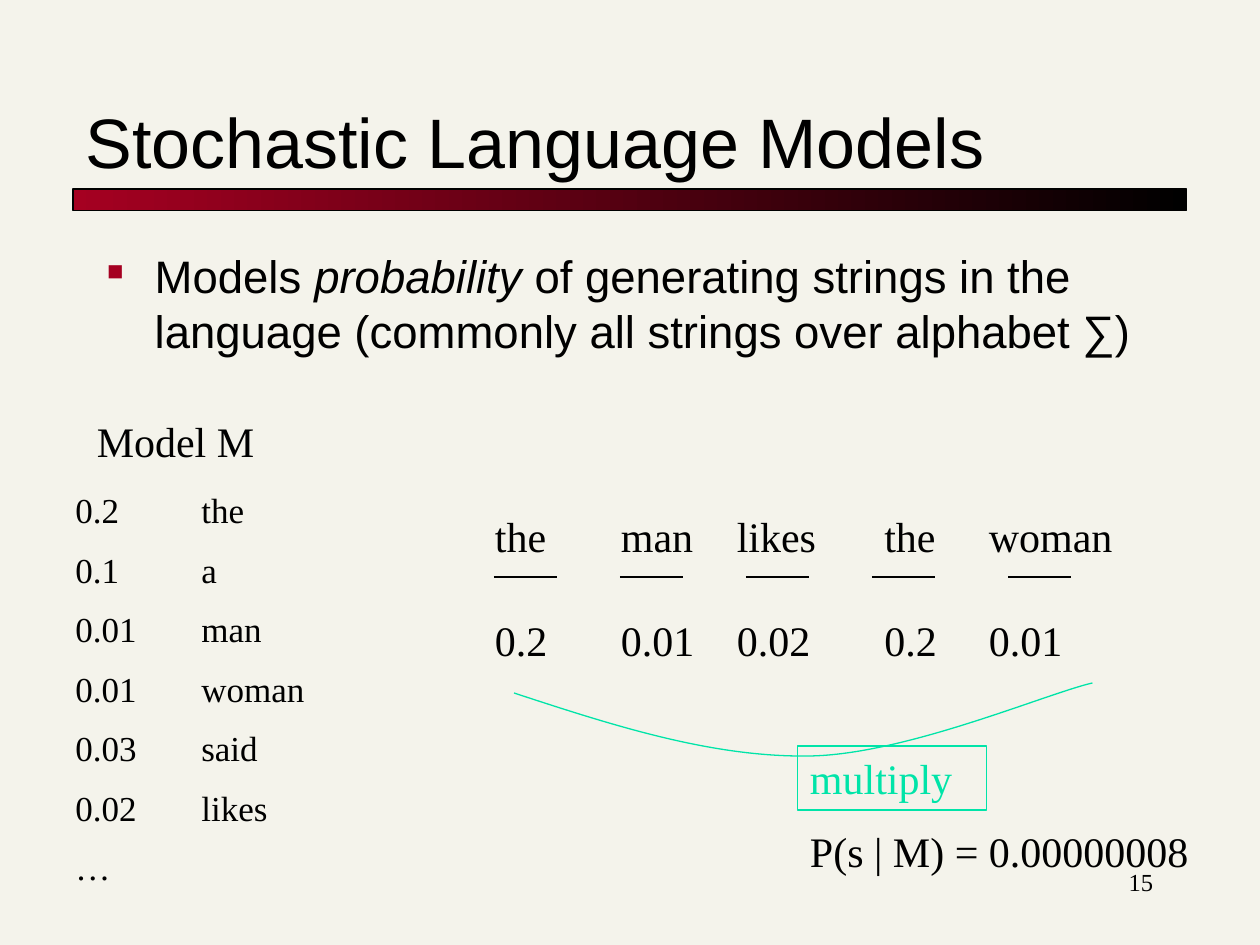
import pptx
import pptx.util
import pptx.dml.color
import pptx.enum.shapes
import pptx.enum.text
import pptx.oxml.ns
from lxml import etree

Inches, Pt = pptx.util.Inches, pptx.util.Pt
RGBColor = pptx.dml.color.RGBColor
MSO_SHAPE = pptx.enum.shapes.MSO_SHAPE
PP_ALIGN = pptx.enum.text.PP_ALIGN
qn = pptx.oxml.ns.qn

BLACK = RGBColor(0x00, 0x00, 0x00)
CREAM = RGBColor(0xF4, 0xF3, 0xEB)
CRIMSON = RGBColor(0xA5, 0x00, 0x21)
MINT = RGBColor(0x00, 0xE4, 0xA8)
SANS, SERIF = "Arial", "Times New Roman"

TITLE = "Stochastic Language Models"
STATEMENT = [
    ("Models ", False),
    ("probability", True),
    (" of generating strings in the language (commonly all strings over alphabet ∑)", False),
]
MODEL = [("0.2", "the"), ("0.1", "a"), ("0.01", "man"), ("0.01", "woman"),
         ("0.03", "said"), ("0.02", "likes"), ("…",)]
MODEL_TAB = 1
SENTENCE = [
    ("the", "0.2", 3.83, 0.67),
    ("man", "0.01", 4.83, 0.83),
    ("likes", "0.02", 5.75, 0.83),
    ("the", "0.2", 6.92, 0.83),
    ("woman", "0.01", 7.75, 1.5),
]
WORD_TOP, RULE_Y, CHANCE_TOP, ROW_HEIGHT = 4, 4.58, 4.83, 0.5
RULE_STARTS = [3.92 + i for i in range(4)] + [8]
RULE_LENGTH = 0.5
CURVE = [(4.08, 5.5), (4.87, 5.76), (5.65, 6.01), (6.42, 6),
         (7.18, 5.99), (8.29, 5.51), (8.67, 5.42)]
LABELS = [
    ("Model M", (0.67, 3.25, 1.5, 0.5), 24, PP_ALIGN.LEFT),
    ("P(s | M) = 0.00000008", (6.33, 6.5, 3.25, 0.5), 24, PP_ALIGN.LEFT),
    ("15", (7.17, 6.83, 2.08, 0.5), 14, PP_ALIGN.RIGHT),
]


def style(paragraph, size, family=SERIF, color=BLACK, align=PP_ALIGN.LEFT):
    paragraph.alignment = align
    paragraph.font.size = Pt(size)
    paragraph.font.name = family
    paragraph.font.color.rgb = color


def add_text(slide, lines, box, size, align=PP_ALIGN.LEFT):
    frame = slide.shapes.add_textbox(*map(Inches, box)).text_frame
    frame.word_wrap = True
    frame.text = "\n".join(lines)
    for i, paragraph in enumerate(frame.paragraphs):
        style(paragraph, size, align=align)
        if i:
            paragraph.space_before = Pt(size * 0.5)
    return frame


def outline(shape, color):
    shape.line.color.rgb = color
    shape.line.width = Pt(0.75)


def add_heading(slide):
    bar = slide.shapes.add_shape(MSO_SHAPE.RECTANGLE, *map(Inches, (0.58, 1.5, 8.84, 0.17)))
    bar.shadow.inherit = False
    bar.fill.gradient()
    bar.fill.gradient_angle = 0
    for stop, color in zip(bar.fill.gradient_stops, (CRIMSON, BLACK)):
        stop.color.rgb = color
    outline(bar, BLACK)

    title = slide.shapes.title
    title.left, title.top, title.width, title.height = map(Inches, (0.58, 0.42, 8.83, 1.08))
    frame = title.text_frame
    frame.text = TITLE
    frame.auto_size = pptx.enum.text.MSO_AUTO_SIZE.NONE
    frame.vertical_anchor = pptx.enum.text.MSO_ANCHOR.BOTTOM
    style(frame.paragraphs[0], 40, SANS)


def add_statement(slide):
    frame = slide.shapes.add_textbox(*map(Inches, (0.75, 1.92, 8.5, 1.19))).text_frame
    frame.word_wrap = True
    paragraph = frame.paragraphs[0]
    for text, italic in STATEMENT:
        run = paragraph.add_run()
        run.text = text
        run.font.italic = italic
    style(paragraph, 26, SANS)
    properties = paragraph._p.get_or_add_pPr()
    properties.set("marL", str(Inches(0.38)))
    properties.set("indent", str(-Inches(0.38)))
    bullet_color = etree.Element(qn("a:buClr"))
    etree.SubElement(bullet_color, qn("a:srgbClr"), val=str(CRIMSON))
    bullet_size = etree.Element(qn("a:buSzPct"), val="50000")
    bullet = etree.Element(qn("a:buChar"), char="■")
    for i, part in enumerate((bullet_color, bullet_size, bullet)):
        properties.insert(i, part)


def add_model(slide):
    rows = ["\t".join(row) for row in MODEL]
    frame = add_text(slide, rows, (0.5, 3.83, 2.67, 3.43), 20)
    for paragraph in frame.paragraphs:
        tabs = etree.Element(qn("a:tabLst"))
        etree.SubElement(tabs, qn("a:tab"), pos=str(Inches(MODEL_TAB)), algn="l")
        paragraph._p.pPr.find(qn("a:defRPr")).addprevious(tabs)


def add_sentence(slide):
    for word, chance, left, width in SENTENCE:
        add_text(slide, [word], (left, WORD_TOP, width, ROW_HEIGHT), 24)
        add_text(slide, [chance], (left, CHANCE_TOP, width, ROW_HEIGHT), 24)
    for start in RULE_STARTS:
        ends = (start, RULE_Y, start + RULE_LENGTH, RULE_Y)
        rule = slide.shapes.add_connector(
            pptx.enum.shapes.MSO_CONNECTOR.STRAIGHT, *map(Inches, ends))
        outline(rule, BLACK)
        etree.SubElement(rule._element.spPr, qn("a:effectLst"))


def add_product(slide):
    start, *controls = [(Inches(x), Inches(y)) for x, y in CURVE]
    builder = slide.shapes.build_freeform(*start)
    builder.add_line_segments(controls, close=False)
    curve = builder.convert_to_shape()
    curve.shadow.inherit = False
    curve.fill.background()
    outline(curve, MINT)
    segments = list(curve._element.iter(qn("a:lnTo")))
    for i in range(0, len(segments), 3):
        bezier = etree.Element(qn("a:cubicBezTo"))
        segments[i].addprevious(bezier)
        for segment in segments[i:i + 3]:
            bezier.append(segment[0])
            segment.getparent().remove(segment)

    multiply = slide.shapes.add_shape(MSO_SHAPE.RECTANGLE, *map(Inches, (6.33, 5.92, 1.5, 0.51)))
    multiply.shadow.inherit = False
    multiply.fill.background()
    outline(multiply, MINT)
    frame = multiply.text_frame
    frame.text = "multiply"
    frame.vertical_anchor = pptx.enum.text.MSO_ANCHOR.TOP
    style(frame.paragraphs[0], 24, color=MINT)


def main():
    deck = pptx.Presentation()
    deck.slide_width, deck.slide_height = Inches(10), Inches(7.5)
    slide = deck.slides.add_slide(deck.slide_layouts[5])
    slide.background.fill.solid()
    slide.background.fill.fore_color.rgb = CREAM
    add_heading(slide)
    add_statement(slide)
    add_model(slide)
    add_sentence(slide)
    add_product(slide)
    for text, box, size, align in LABELS:
        add_text(slide, [text], box, size, align)
    deck.save("out.pptx")


if __name__ == "__main__":
    main()
